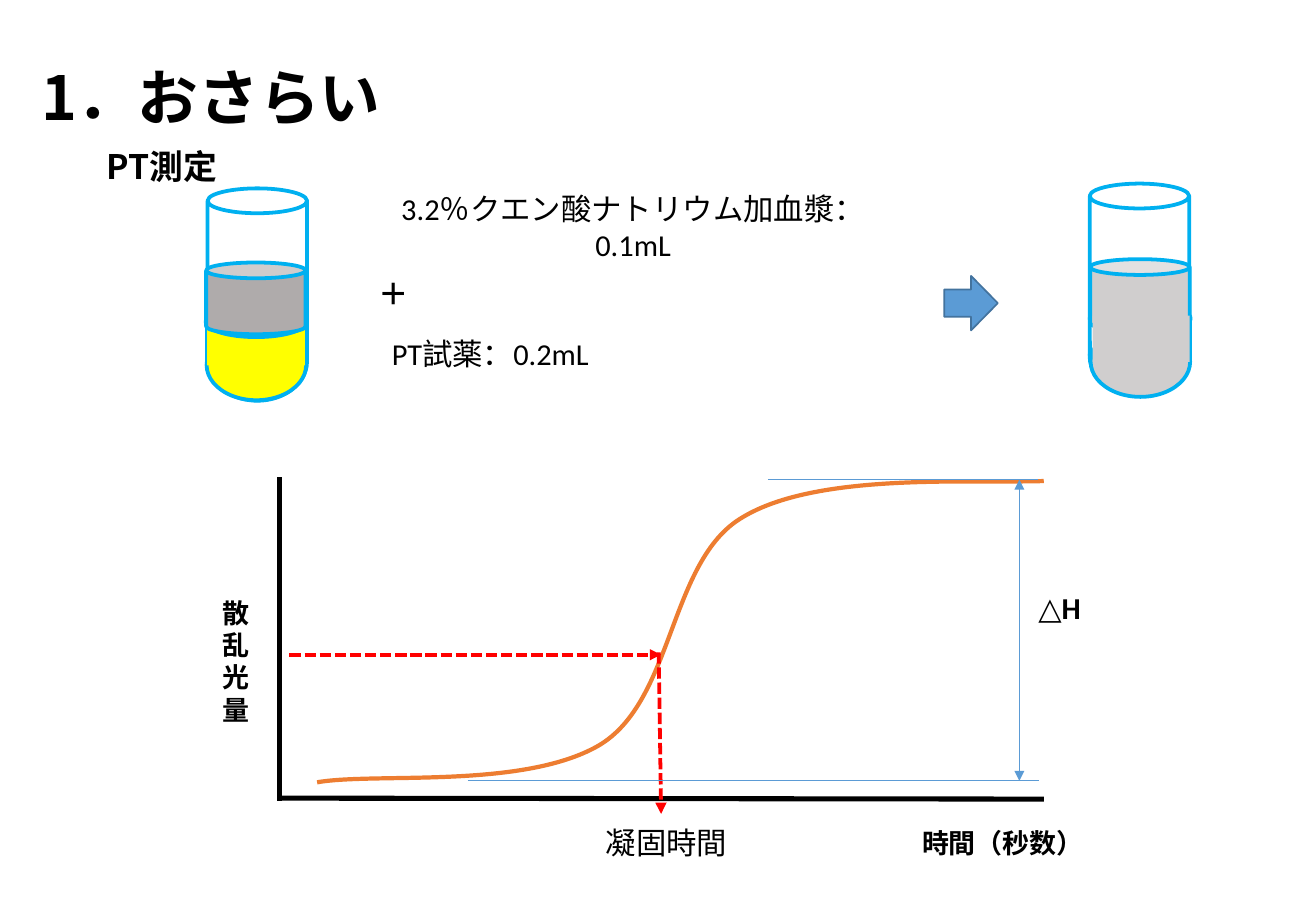
from pptx import Presentation
from pptx.dml.color import RGBColor
from pptx.enum.dml import MSO_LINE
from pptx.enum.shapes import MSO_CONNECTOR, MSO_SHAPE
from pptx.enum.text import MSO_ANCHOR, PP_ALIGN
from pptx.oxml.ns import qn
from pptx.util import Cm, Pt
from lxml.etree import SubElement

BLACK = RGBColor(0x00, 0x00, 0x00)
WHITE = RGBColor(0xFF, 0xFF, 0xFF)
GLASS = RGBColor(0x00, 0xB0, 0xF0)
REAGENT = RGBColor(0xFF, 0xFF, 0x00)
PLASMA = RGBColor(0xAF, 0xAB, 0xAB)
MIXTURE = RGBColor(0xD0, 0xCE, 0xCE)
CURVE = RGBColor(0xED, 0x7D, 0x31)
GUIDE = RGBColor(0x5B, 0x9B, 0xD5)
ARROW_EDGE = RGBColor(0x43, 0x73, 0x9E)
RED = RGBColor(0xFF, 0x00, 0x00)
LATIN, JAPANESE = "Calibri", "Noto Sans CJK JP"


def style_text(paragraph, size, bold, name, align):
    paragraph.alignment = align
    font = paragraph.font
    font.size, font.bold, font.name = Pt(size), bold, name
    font.color.rgb = BLACK
    properties = paragraph._p.pPr.find(qn("a:defRPr"))
    SubElement(properties, qn("a:ea"), typeface=JAPANESE)


def add_label(page, left, top, width, height, text, size=18, bold=False, name=LATIN):
    box = page.shapes.add_textbox(Cm(left), Cm(top), Cm(width), Cm(height))
    frame = box.text_frame
    frame.word_wrap = True
    frame.vertical_anchor = MSO_ANCHOR.MIDDLE
    frame.text = text
    for paragraph in frame.paragraphs:
        style_text(paragraph, size, bold, name, PP_ALIGN.CENTER)


def add_part(page, kind, left, top, width, height, fill, line=None, weight=2.25):
    part = page.shapes.add_shape(kind, Cm(left), Cm(top), Cm(width), Cm(height))
    part.shadow.inherit = False
    part.fill.solid()
    part.fill.fore_color.rgb = fill
    if line is None:
        part.line.fill.background()
    else:
        part.line.color.rgb = line
        part.line.width = Pt(weight)
    return part


def add_line(page, start, end, color, weight, dash=None, ends=()):
    line = page.shapes.add_connector(
        MSO_CONNECTOR.STRAIGHT, *(Cm(value) for value in (*start, *end)))
    line.line.color.rgb = color
    line.line.width = Pt(weight)
    if dash is not None:
        line.line.dash_style = dash
    properties = line._element.spPr
    for end_name in ends:
        SubElement(properties.find(qn("a:ln")), qn(end_name), type="triangle")
    SubElement(properties, qn("a:effectLst"))


def add_title(page):
    title = page.shapes.title
    title.left, title.top, title.width, title.height = Cm(0.66), Cm(0.56), Cm(9.8), Cm(2.9)
    frame = title.text_frame
    frame.text = "1．おさらい"
    frame.vertical_anchor = MSO_ANCHOR.MIDDLE
    frame.margin_left = frame.margin_right = Cm(0.2)
    frame.margin_top = frame.margin_bottom = Cm(0.1)
    style_text(frame.paragraphs[0], 36, True, JAPANESE, PP_ALIGN.LEFT)


def add_recipe(page, left, top):
    add_label(page, left, top, 10.97, 1.5, "3.2％クエン酸ナトリウム加血漿：0.1mL")
    add_label(page, left, top + 2.64, 5, 1.5, "PT試薬：0.2mL")
    add_label(page, left - 0.08, top + 1.57, 1.04, 1.17, "＋", bold=True)


def add_tube(page, left, top):
    """Empty glass tube with a round bottom."""
    add_part(page, MSO_SHAPE.CAN, left, top, 2.08, 3.84, WHITE, GLASS)
    add_part(page, MSO_SHAPE.OVAL, left, top + 2.79, 2.08, 1.65, WHITE, GLASS)
    add_part(page, MSO_SHAPE.RECTANGLE, left + 0.05, top + 2.01, 1.98, 1.7, WHITE)


def add_liquid(page, left, top, lower, upper):
    """Liquid in a tube; one colour hides the border between the layers."""
    mixed = lower == upper

    def add_body():
        inset = 0.05 if mixed else 0
        add_part(page, MSO_SHAPE.RECTANGLE, left + inset, top + 1.18, 2.08 - inset, 0.97, lower)

    add_part(page, MSO_SHAPE.OVAL, left + 0.01, top + 1.41, 2.08, 1.47, lower, GLASS)
    if not mixed:
        add_body()
    add_part(page, MSO_SHAPE.OVAL, left - 0.01, top + 0.92, 2.11, 0.64, lower, GLASS)
    for side in (0, 2.1):
        add_line(page, (left + side, top + 1.29), (left + side, top + 2.17), GLASS, 1.5)
    surface = add_part(page, MSO_SHAPE.CAN, left, top, 2.08, 1.5, upper, GLASS)
    surface.adjustments[0] = 0.22
    if mixed:
        add_body()


def add_curve(page, left, top):
    """S-shaped curve of three cubic pieces."""
    points = [(0.79, 6.38), (1.98, 6.17), (5.06, 6.53), (6.66, 5.62),
              (8.26, 4.7), (8.13, 1.75), (9.68, 0.84),
              (11.23, -0.1), (14.35, 0.13), (15.98, 0.08)]
    places = [(Cm(left + x), Cm(top + y)) for x, y in points]
    builder = page.shapes.build_freeform(*places[0])
    builder.add_line_segments(places[1:], close=False)
    curve = builder.convert_to_shape()
    curve.shadow.inherit = False
    curve.fill.background()
    curve.line.color.rgb = CURVE
    curve.line.width = Pt(2.5)
    # Every three straight pieces become one cubic piece
    outline = next(curve._element.iter(qn("a:path")))
    pieces = outline.findall(qn("a:lnTo"))
    for first in range(0, len(pieces), 3):
        cubic = SubElement(outline, qn("a:cubicBezTo"))
        for piece in pieces[first:first + 3]:
            cubic.append(piece[0])
            outline.remove(piece)


def add_graph(page, left, top):
    def line(start, end, *style, **options):
        add_line(page, (left + start[0], top + start[1]),
                 (left + end[0], top + end[1]), *style, **options)

    def label(x, y, width, height, text, **options):
        add_label(page, left + x, top + y, width, height, text, **options)

    # Axes
    line((15.98, 6.73), (0, 6.71), BLACK, 3)
    label(12.7, 6.99, 4.85, 1.3, "時間（秒数）", size=16, bold=True)
    line((0, 0), (0, 6.76), BLACK, 3)
    label(-1.5, 2.14, 1.19, 3.4, "散\n乱\n光\n量", size=16, bold=True)
    add_curve(page, left, top)
    # Clotting time
    for start, end in (((0.21, 3.71), (7.98, 3.71)), ((7.93, 3.66), (7.98, 7.04))):
        line(start, end, RED, 2.25, dash=MSO_LINE.SQUARE_DOT, ends=["a:tailEnd"])
    label(6.38, 7.04, 3.43, 1.19, "凝固時間")
    # Height of the change
    line((3.94, 6.35), (15.88, 6.35), GUIDE, 0.5)
    line((10.21, 0.05), (15.85, 0.05), GUIDE, 0.5)
    line((15.47, 0.05), (15.47, 6.35), GUIDE, 0.5, ends=["a:headEnd", "a:tailEnd"])
    label(15.47, 2.03, 1.68, 1.37, "△H", bold=True)


def main():
    deck = Presentation()
    deck.slide_width, deck.slide_height = Cm(27.51), Cm(19.05)
    page = deck.slides.add_slide(deck.slide_layouts[5])
    add_title(page)
    add_label(page, 0.13, 2.54, 6.5, 1.88, "PT測定", size=20, bold=True, name=JAPANESE)
    add_recipe(page, 7.75, 3.99)
    # Tubes before and after mixing
    add_tube(page, 4.34, 3.94)
    add_liquid(page, 4.31, 5.49, REAGENT, PLASMA)
    add_part(page, MSO_SHAPE.RIGHT_ARROW, 19.74, 5.77, 1.12, 1.14, GUIDE, ARROW_EDGE, 1)
    add_tube(page, 22.78, 3.84)
    add_liquid(page, 22.79, 5.42, MIXTURE, MIXTURE)
    add_graph(page, 5.84, 9.98)
    deck.save("out.pptx")


if __name__ == "__main__":
    main()
